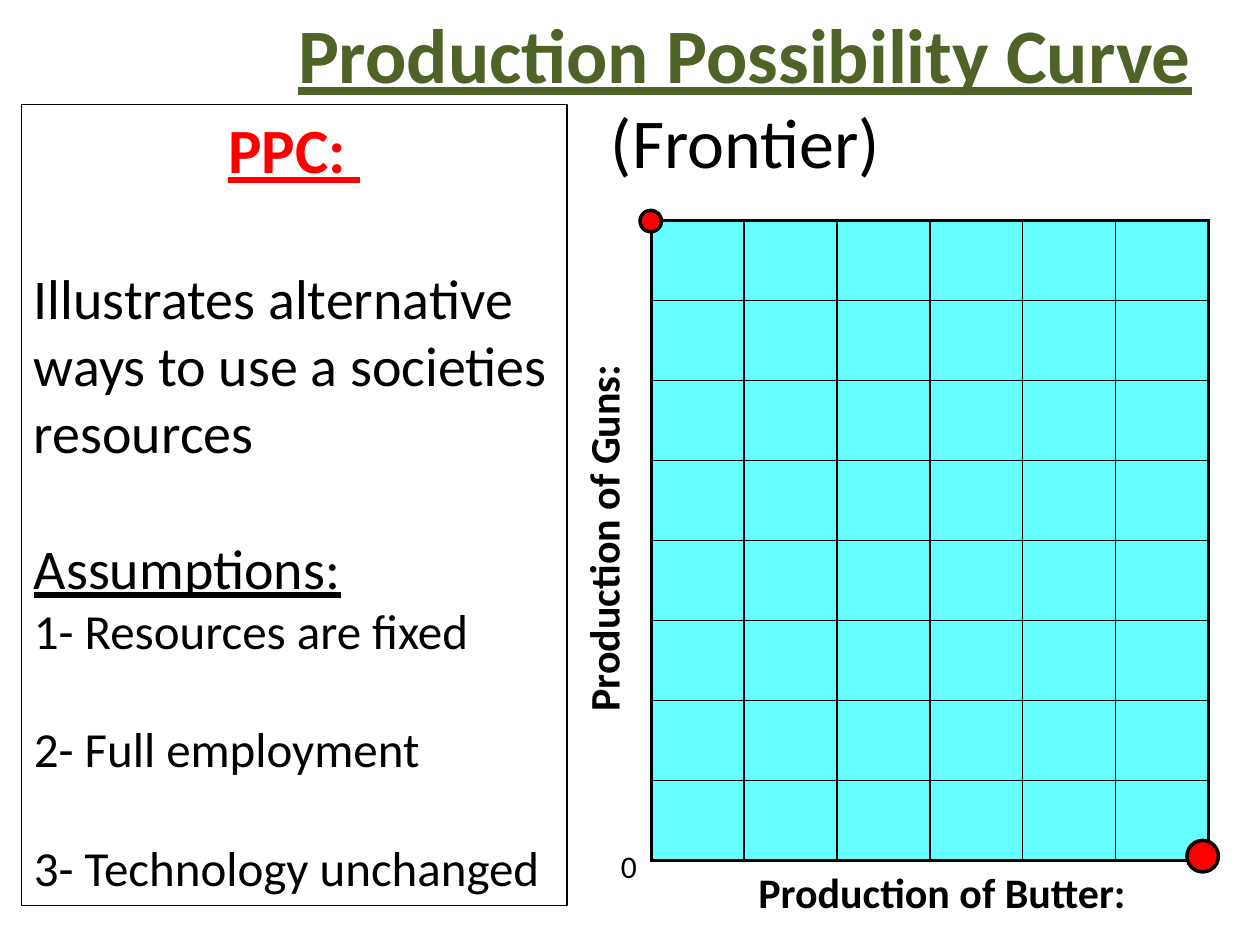
from dataclasses import dataclass

from lxml import etree
from pptx import Presentation
from pptx.dml.color import RGBColor
from pptx.enum import shapes, text
from pptx.oxml import ns
from pptx.util import Inches, Pt


@dataclass(frozen=True)
class Theme:
    """Colours, font and point sizes of the slide."""
    font: str = "Calibri"
    black: str = "000000"
    green: str = "4F6228"
    red: str = "FF0000"
    cyan: str = "66FFFF"
    title: int = 44
    subtitle: int = 40
    heading: int = 36
    body: int = 32
    item: int = 28
    axis: int = 24
    origin: int = 18
    thin: float = 1
    thick: float = 2.25


THEME = Theme()


def write(frame, lines):
    """Fill a text frame with (words, size, format) lines."""
    frame.word_wrap = True
    frame.vertical_anchor = text.MSO_ANCHOR.TOP
    frame.text = "\n".join(words for words, _, _ in lines)
    for paragraph, (_, size, style) in zip(frame.paragraphs, lines):
        paragraph.alignment = style.get("align", text.PP_ALIGN.LEFT)
        paragraph.space_before = Pt(style.get("before", 0))
        for run in paragraph.runs:
            run.font.name = THEME.font
            run.font.size = Pt(size)
            run.font.bold = style.get("bold", False)
            run.font.underline = style.get("underline", False)
            run.font.color.rgb = RGBColor.from_string(style.get("color", THEME.black))


def add_text(slide, box, lines, rotation=0):
    """Add a text box holding the given lines."""
    shape = slide.shapes.add_textbox(*map(Inches, box))
    shape.rotation = rotation
    write(shape.text_frame, lines)


def add_outlined(slide, kind, box, width, fill=None):
    """Add a black-outlined preset shape, filled if a colour is given."""
    shape = slide.shapes.add_shape(kind, *map(Inches, box))
    shape.shadow.inherit = False
    shape.line.color.rgb = RGBColor.from_string(THEME.black)
    shape.line.width = Pt(width)
    if fill:
        shape.fill.solid()
        shape.fill.fore_color.rgb = RGBColor.from_string(fill)
    else:
        shape.fill.background()
    return shape


def add_title(slide, box):
    """Add the centred title and its subtitle."""
    center = text.PP_ALIGN.CENTER
    add_text(slide, box, [
        ("Production Possibility Curve", THEME.title,
         dict(align=center, bold=True, underline=True, color=THEME.green)),
        ("(Frontier)", THEME.subtitle, dict(align=center)),
    ])


def add_definition(slide, box):
    """Add the framed definition with its list of assumptions."""
    panel = add_outlined(slide, shapes.MSO_SHAPE.RECTANGLE, box, 0.75)
    write(panel.text_frame, [
        ("PPC: ", THEME.heading, dict(align=text.PP_ALIGN.CENTER, bold=True,
                                      underline=True, color=THEME.red)),
        ("Illustrates alternative ways to use a societies resources",
         THEME.body, dict(before=44)),
        ("Assumptions:", THEME.body, dict(before=39, underline=True)),
        ("1- Resources are fixed", THEME.item, {}),
        ("2- Full employment", THEME.item, dict(before=34)),
        ("3- Technology unchanged", THEME.item, dict(before=34)),
    ])


def set_border(cell, side, width):
    """Draw one side (L, R, T or B) of a table cell."""
    properties = cell._tc.get_or_add_tcPr()
    line = etree.SubElement(properties, ns.qn(f"a:ln{side}"), w=str(Pt(width)))
    fill = etree.SubElement(line, ns.qn("a:solidFill"))
    etree.SubElement(fill, ns.qn("a:srgbClr"), val=THEME.black)


def add_grid(slide, box, rows=8, columns=6):
    """Add the plotting grid as a table with a heavier outer border."""
    left, top, width, height = map(Inches, box)
    table = slide.shapes.add_table(rows, columns, left, top, width, height).table
    table.first_row = table.horz_banding = False
    for row in range(rows):
        for column in range(columns):
            cell = table.cell(row, column)
            outer = {"L": column == 0, "R": column == columns - 1,
                     "T": row == 0, "B": row == rows - 1}
            for side, is_outer in outer.items():
                set_border(cell, side, THEME.thick if is_outer else THEME.thin)
            cell.fill.solid()
            cell.fill.fore_color.rgb = RGBColor.from_string(THEME.cyan)


def add_chart_area(slide, box):
    """Add the grid, its axis labels and the two end points."""
    left, top, width, height = box
    bottom = top + height
    add_grid(slide, box)
    bold = dict(bold=True)
    add_text(slide, (left - 2.26, top + 1.87, 3.75, 0.5),
             [("Production of Guns:", THEME.axis, bold)], rotation=270)
    add_text(slide, (left + 0.75, bottom, 3.58, 0.5),
             [("Production of Butter:", THEME.axis, bold)])
    points = [(left - 0.09, top - 0.08, 0.17),
              (left + width - 0.17, bottom - 0.16, 0.25)]
    for x, y, size in points:
        add_outlined(slide, shapes.MSO_SHAPE.OVAL, (x, y, size, size), 2, THEME.red)
    add_text(slide, (left - 0.34, bottom - 0.16, 0.33, 0.4),
             [("0", THEME.origin, {})])


def main():
    """Build and save the slide."""
    presentation = Presentation()
    presentation.slide_width, presentation.slide_height = Inches(10), Inches(7.5)
    slide = presentation.slides.add_slide(presentation.slide_layouts[6])
    add_title(slide, (1.83, 0, 8.17, 1.51))
    add_definition(slide, (0.17, 0.83, 4.33, 6.36))
    add_chart_area(slide, (5.17, 1.75, 4.42, 5.08))
    presentation.save("out.pptx")


if __name__ == "__main__":
    main()
